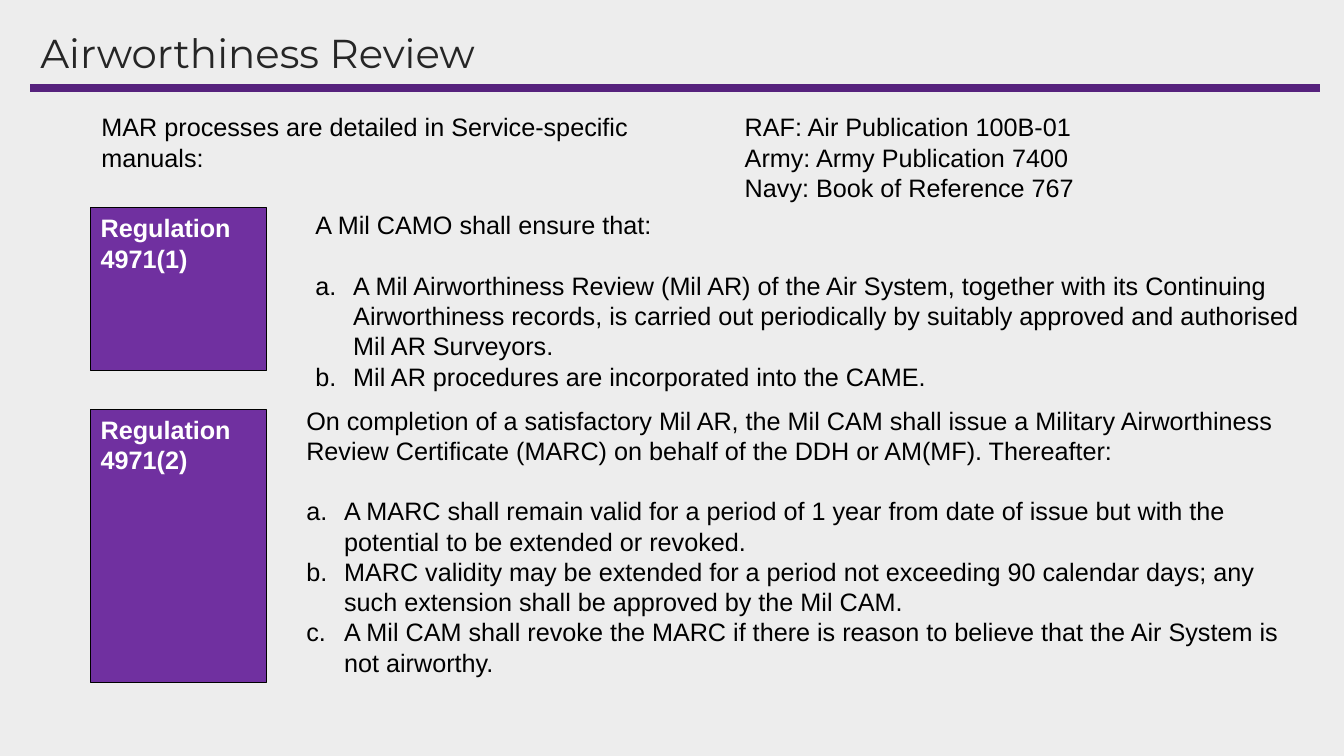
from lxml import etree
from pptx import Presentation
from pptx.dml.color import RGBColor
from pptx.enum import shapes, text
from pptx.oxml import ns
from pptx.util import Pt

COLOURS = {"background": "EDEDED", "rule": "56227D", "panel": "7030A0",
           "heading": "262626", "body": "000000", "label": "FFFFFF"}
BODY = {"name": "Arial", "size": Pt(18), "bold": False}
LABEL = {**BODY, "bold": True}
HEADING = {"name": "Montserrat", "size": Pt(28.8), "bold": False}
LIST_INDENT = 27
LIST_GAP = 21.6


def colour(key):
    return RGBColor.from_string(COLOURS[key])


def points(*lengths):
    return [Pt(length) for length in lengths]


def format_font(paragraph, values, colour_key):
    for name, value in values.items():
        setattr(paragraph.font, name, value)
    paragraph.font.color.rgb = colour(colour_key)


def add_letter(paragraph):
    properties = paragraph._p.get_or_add_pPr()
    properties.set("marL", str(Pt(LIST_INDENT)))
    properties.set("indent", str(-Pt(LIST_INDENT)))
    etree.SubElement(properties, ns.qn("a:buAutoNum"), type="alphaLcPeriod")


def fill_text(frame, lines, values, colour_key):
    frame.word_wrap = True
    frame.vertical_anchor = text.MSO_ANCHOR.TOP
    frame.text = "\n".join(lines)
    for paragraph in frame.paragraphs:
        paragraph.alignment = text.PP_ALIGN.LEFT
        format_font(paragraph, values, colour_key)


# Title and the rule beneath it
def add_heading(slide, title_text, left, top, width, height):
    title = slide.shapes.title
    title.left, title.top, title.width, title.height = points(left, top, width, height)
    fill_text(title.text_frame, [title_text], HEADING, "heading")
    title.text_frame.vertical_anchor = text.MSO_ANCHOR.MIDDLE
    title.text_frame.paragraphs[0].line_spacing = 0.9

    rule_y = top + height + 4.3
    rule = slide.shapes.add_connector(
        shapes.MSO_CONNECTOR.STRAIGHT, *points(left, rule_y, left + width, rule_y))
    rule.line.color.rgb = colour("rule")
    rule.line.width = Pt(6)
    etree.SubElement(rule._element.spPr, ns.qn("a:effectLst"))


# Plain text block
def add_passage(slide, lines, left, top, width, height):
    passage = slide.shapes.add_textbox(*points(left, top, width, height))
    fill_text(passage.text_frame, lines, BODY, "body")
    return passage.text_frame


# Purple label
def add_label(slide, label_text, left, top, width, height):
    label = slide.shapes.add_shape(
        shapes.MSO_SHAPE.RECTANGLE, *points(left, top, width, height))
    label.shadow.inherit = False
    label.fill.solid()
    label.fill.fore_color.rgb = colour("panel")
    label.line.color.rgb = colour("body")
    label.line.width = Pt(0.75)
    fill_text(label.text_frame, [label_text], LABEL, "label")


# Regulation: label on the left, lead-in and lettered clauses on the right
def add_regulation(slide, number, lead_in, clauses, box, label_height, clause_offset):
    left, top, width, height = box
    add_label(slide, f"Regulation {number}", left, top, 125.3, label_height)
    x, y = clause_offset
    frame = add_passage(slide, [lead_in], left + x, top + y, width, height)
    for index, clause in enumerate(clauses):
        paragraph = frame.add_paragraph()
        paragraph.text = clause
        if index == 0:
            paragraph.space_before = Pt(LIST_GAP)
        add_letter(paragraph)
        format_font(paragraph, BODY, "body")


def main():
    deck = Presentation()
    deck.slide_width, deck.slide_height = points(960, 540)
    slide = deck.slides.add_slide(deck.slide_layouts[5])
    slide.background.fill.solid()
    slide.background.fill.fore_color.rgb = colour("background")

    add_heading(slide, "Airworthiness Review", 21.6, 20.2, 921.6, 38.2)
    add_passage(slide, ["MAR processes are detailed in Service-specific manuals:"],
                65.4, 76.3, 456.5, 51)
    add_passage(slide, ["RAF: Air Publication 100B-01",
                        "Army: Army Publication 7400",
                        "Navy: Book of Reference 767"], 524.9, 76.3, 305.3, 72.7)
    add_regulation(
        slide, "4971(1)", "A Mil CAMO shall ensure that:",
        ["A Mil Airworthiness Review (Mil AR) of the Air System, together with its "
         "Continuing Airworthiness records, is carried out periodically by suitably "
         "approved and authorised Mil AR Surveyors.",
         "Mil AR procedures are incorporated into the CAME."],
        (64.8, 148.3, 728.6, 138.2), 116.6, (153.4, -2.1))
    add_regulation(
        slide, "4971(2)",
        "On completion of a satisfactory Mil AR, the Mil CAM shall issue a Military "
        "Airworthiness Review Certificate (MARC) on behalf of the DDH or AM(MF). Thereafter:",
        ["A MARC shall remain valid for a period of 1 year from date of issue but with "
         "the potential to be extended or revoked.",
         "MARC validity may be extended for a period not exceeding 90 calendar days; any "
         "such extension shall be approved by the Mil CAM.",
         "A Mil CAM shall revoke the MARC if there is reason to believe that the Air "
         "System is not airworthy."],
        (64.8, 292.3, 728.6, 203.8), 195.1, (146.9, -6.5))

    deck.save("out.pptx")


if __name__ == "__main__":
    main()
